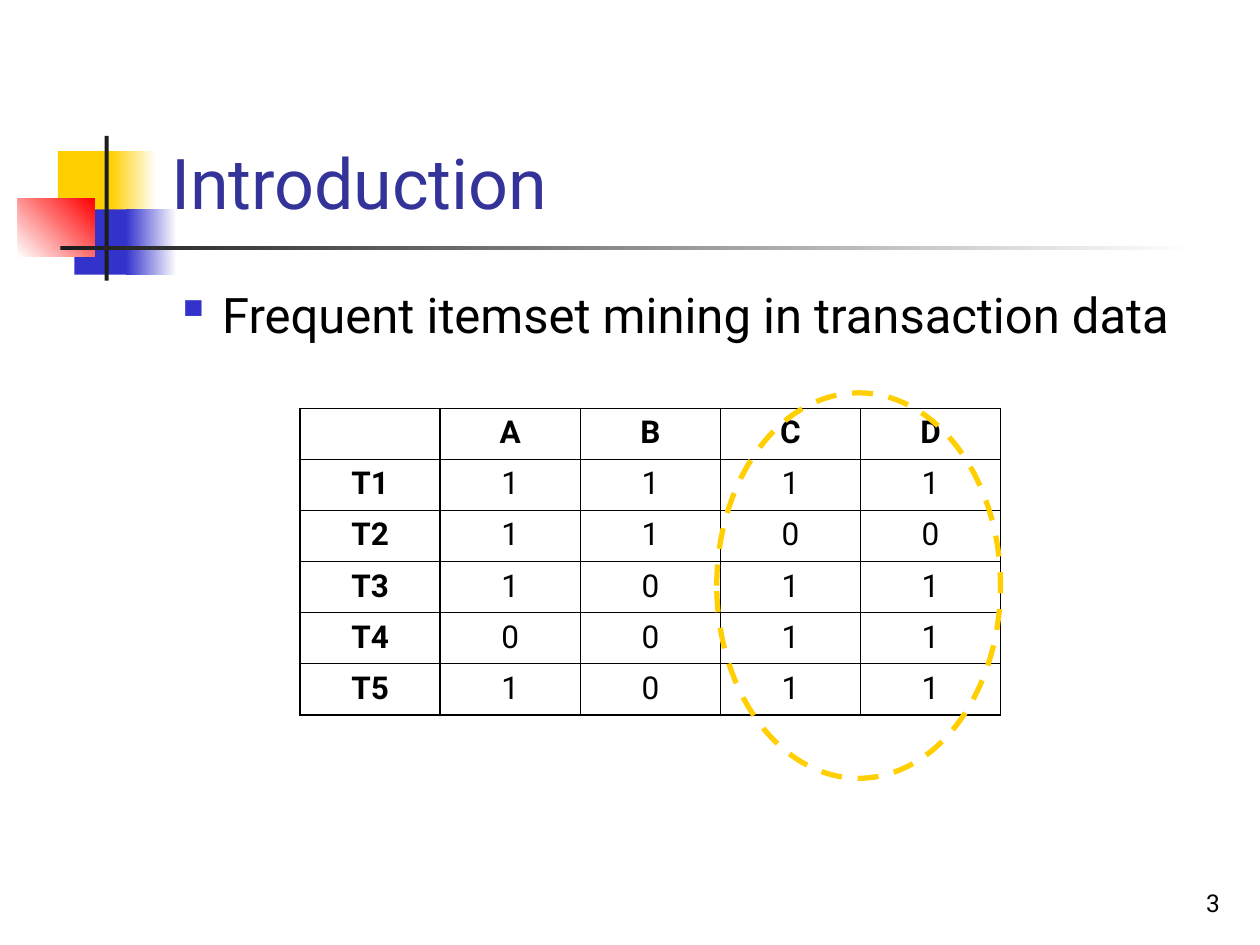
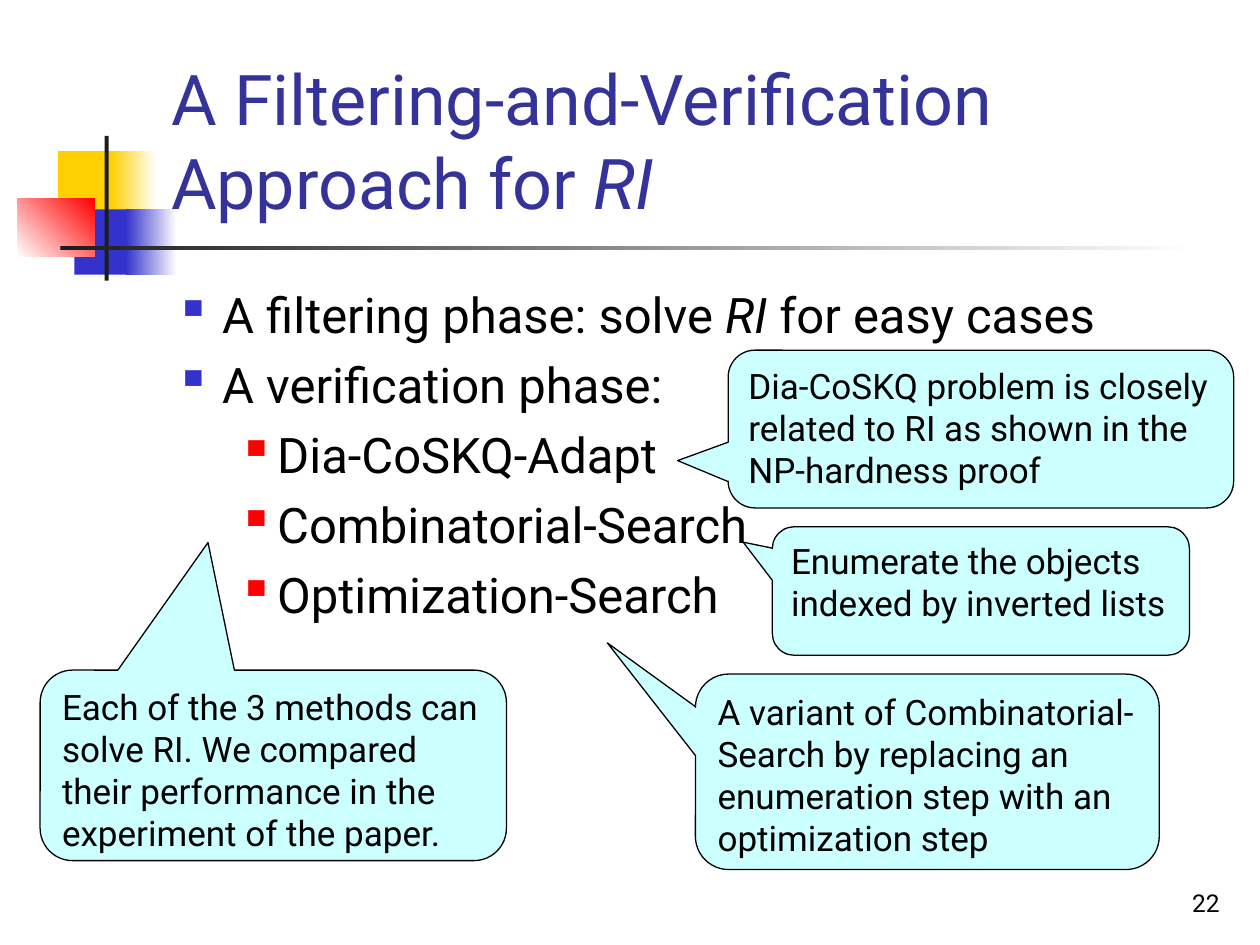
from lxml import etree
from pptx import Presentation
from pptx.dml.color import RGBColor
from pptx.enum.dml import MSO_LINE
from pptx.enum.shapes import MSO_SHAPE
from pptx.enum.text import MSO_ANCHOR, PP_ALIGN
from pptx.oxml.ns import qn
from pptx.util import Cm, Pt

RECTANGLE = MSO_SHAPE.RECTANGLE
ELLIPSE = MSO_SHAPE.OVAL
CALLOUT = MSO_SHAPE.ROUNDED_RECTANGULAR_CALLOUT
DASH = MSO_LINE.DASH
TOP, BOTTOM = MSO_ANCHOR.TOP, MSO_ANCHOR.BOTTOM
LEFT, CENTER, RIGHT = PP_ALIGN.LEFT, PP_ALIGN.CENTER, PP_ALIGN.RIGHT

FONT = "Roboto"
COLORS = {
    "title": "333399",
    "text": "000000",
    "yellow": "FFCF01",
    "blue": "3333CC",
    "red": "FF0000",
    "bar": "1C1C1C",
    "white": "FFFFFF",
    "callout": "CCFFFF",
}
# Per outline level: left margin and hanging indent in cm, bullet colour
BULLETS = [(0.95, 0.95, "blue"), (2.06, 0.79, "red")]

# Position and size in cm, colours, gradient angle
ORNAMENT = [
    ((1.17, 3.05, 1.22, 1.32), ["yellow"], 0),
    ((2.24, 3.05, 0.91, 1.32), ["yellow", "white"], 0),
    ((1.5, 4.22, 1.17, 1.32), ["blue"], 0),
    ((2.54, 4.22, 1.02, 1.32), ["blue", "white"], 0),
    ((0.36, 4.01, 1.55, 1.17), ["white", "red"], 45),
    ((2.11, 2.74, 0.08, 2.92), ["bar"], 0),
    ((1.22, 4.95, 22.86, 0.09), ["bar", "white"], 0),
]

TRANSACTIONS = [
    ["", "A", "B", "C", "D"],
    ["T1", "1", "1", "1", "1"],
    ["T2", "1", "1", "0", "0"],
    ["T3", "1", "0", "1", "1"],
    ["T4", "0", "0", "1", "1"],
    ["T5", "1", "0", "1", "1"],
]

# Position and size in cm, pointer tip relative to the centre, text
METHOD_NOTES = [
    ((0.81, 13.51, 9.4, 3.84), (-0.14, -1.17),
     "Each of the 3 methods can solve RI. We compared their performance "
     "in the experiment of the paper."),
    ((14.68, 7.06, 10.19, 3.18), (-0.6, 0.2),
     "Dia-CoSKQ problem is closely related to RI as shown in the NP-hardness proof"),
    ((14.02, 13.59, 9.35, 3.94), (-0.69, -0.66),
     "A variant of Combinatorial-Search by replacing an enumeration step "
     "with an optimization step"),
    ((15.57, 10.62, 8.41, 2.59), (-0.57, -0.38),
     "Enumerate the objects indexed by inverted lists"),
]


def color(name):
    return RGBColor.from_string(COLORS[name])


def lengths(area):
    return [Cm(value) for value in area]


class SlideBuilder:
    """Holds the deck, its style and the slide being filled."""

    def __init__(self):
        self.deck = Presentation()
        self.deck.slide_width, self.deck.slide_height = Cm(25.4), Cm(19.05)
        self.page = None

    def start_slide(self, title, number):
        self.page = self.deck.slides.add_slide(self.deck.slide_layouts[6])
        for area, fill, angle in ORNAMENT:
            self.shape(RECTANGLE, area, fill, angle)
        self.text_box((3.2, 0.58, 21.64, 4.06), title, 40, "title", anchor=BOTTOM)
        self.text_box((19.56, 17.35, 5.28, 1.27), str(number), 14,
                      align=RIGHT, anchor=BOTTOM)

    def fill_para(self, para, text, size, name="text", bold=False, align=LEFT):
        """Fill a paragraph; words between asterisks become italic."""
        first, *others = text.split("*")
        para.text = first
        para.alignment = align
        for piece in others:
            para.add_run().text = piece
        for index, span in enumerate(para.runs):
            span.font.name = FONT
            span.font.size = Pt(size)
            span.font.bold = bold
            span.font.italic = index % 2 == 1
            span.font.color.rgb = color(name)

    def text_box(self, area, text, size, name="text", align=LEFT, anchor=TOP):
        box = self.page.shapes.add_textbox(*lengths(area))
        frame = box.text_frame
        frame.word_wrap = True
        frame.vertical_anchor = anchor
        self.fill_para(frame.paragraphs[0], text, size, name, align=align)
        return frame

    def bullets(self, items):
        """Add the body outline from (level, text) pairs."""
        frame = self.text_box((3.28, 5.61, 21.59, 11.43), "", 28)
        for index, (level, text) in enumerate(items):
            para = frame.add_paragraph() if index else frame.paragraphs[0]
            self.fill_para(para, text, 28)
            para.level = level
            para.space_before = Pt(6.4)
            margin, hanging, name = BULLETS[level]
            properties = para._p.get_or_add_pPr()
            properties.set("marL", str(Cm(margin)))
            properties.set("indent", str(-Cm(hanging)))
            tint = etree.SubElement(properties, qn("a:buClr"))
            etree.SubElement(tint, qn("a:srgbClr"), val=COLORS[name])
            etree.SubElement(properties, qn("a:buChar"), char="▪")

    def shape(self, kind, area, fill=(), angle=0, line=None, width=0.75):
        """Add a shape with no fill, one fill colour or a two-colour gradient."""
        shape = self.page.shapes.add_shape(kind, *lengths(area))
        shape.shadow.inherit = False
        if len(fill) == 2:
            shape.fill.gradient()
            shape.fill.gradient_angle = angle
            for stop, name in zip(shape.fill.gradient_stops, fill):
                stop.color.rgb = color(name)
        elif fill:
            shape.fill.solid()
            shape.fill.fore_color.rgb = color(fill[0])
        else:
            shape.fill.background()
        if line:
            shape.line.color.rgb = color(line)
            shape.line.width = Pt(width)
        else:
            shape.line.fill.background()
        return shape

    def callout(self, area, tip, text):
        shape = self.shape(CALLOUT, area, ["callout"], line="text")
        for index, value in enumerate((*tip, 0.17)):
            shape.adjustments[index] = value
        frame = shape.text_frame
        frame.word_wrap = True
        frame.vertical_anchor = TOP
        self.fill_para(frame.paragraphs[0], text, 20)

    def table(self, area, rows):
        """Add a plain grid whose first row and column are bold."""
        grid = self.page.shapes.add_table(
            len(rows), len(rows[0]), *lengths(area)).table
        grid.first_row = grid.horz_banding = False
        for row_index, row in enumerate(rows):
            for column_index, text in enumerate(row):
                cell = grid.cell(row_index, column_index)
                self.border(cell)
                cell.fill.background()
                heading = row_index == 0 or column_index == 0
                self.fill_para(cell.text_frame.paragraphs[0], text, 18,
                               bold=heading, align=CENTER)

    def border(self, cell):
        properties = cell._tc.get_or_add_tcPr()
        for side in ("lnL", "lnR", "lnT", "lnB"):
            edge = etree.SubElement(properties, qn(f"a:{side}"), w=str(Pt(1)))
            fill = etree.SubElement(edge, qn("a:solidFill"))
            etree.SubElement(fill, qn("a:srgbClr"), val=COLORS["text"])


def main():
    builder = SlideBuilder()

    builder.start_slide("Introduction", 3)
    builder.bullets([(0, "Frequent itemset mining in transaction data")])
    builder.table((6.05, 8.23, 14.12, 6.18), TRANSACTIONS)
    itemset_ring = builder.shape(ELLIPSE, (14.45, 7.92, 5.72, 7.77),
                                 line="yellow", width=3)
    itemset_ring.line.dash_style = DASH

    builder.start_slide("A Filtering-and-Verification Approach for *RI*", 22)
    builder.bullets([
        (0, "A filtering phase: solve *RI* for easy cases"),
        (0, "A verification phase:"),
        (1, "Dia-CoSKQ-Adapt"),
        (1, "Combinatorial-Search"),
        (1, "Optimization-Search"),
    ])
    for area, tip, text in METHOD_NOTES:
        builder.callout(area, tip, text)

    builder.deck.save("out.pptx")


if __name__ == "__main__":
    main()
